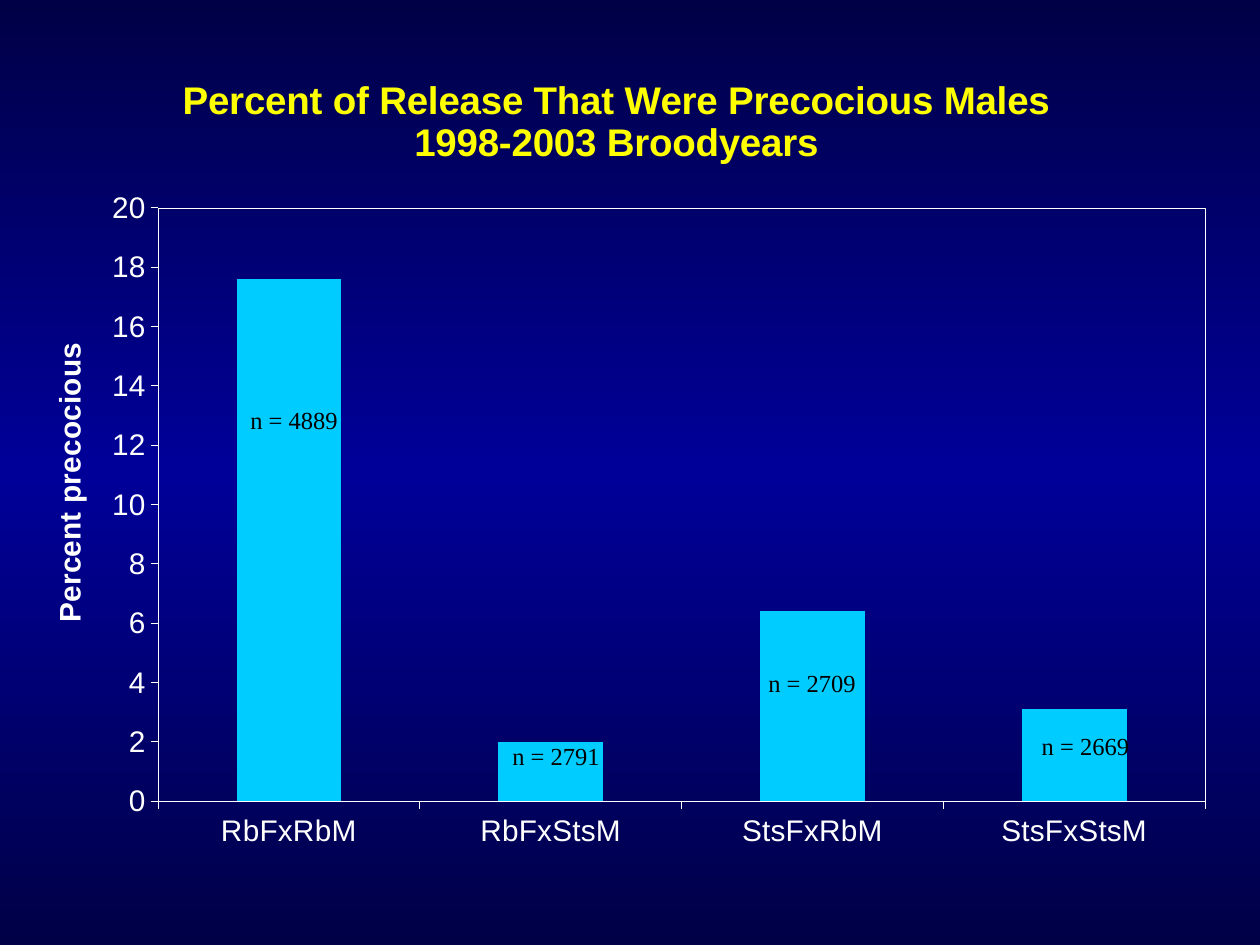
from lxml import etree
from pptx import Presentation
from pptx import util as u
from pptx.chart import data
from pptx.dml.color import RGBColor
from pptx.enum import chart as ch, text
from pptx.oxml import parse_xml
from pptx.oxml.ns import nsdecls, qn

WHITE, YELLOW, CYAN, BLACK = "FFFFFF", "FFFF00", "00CCFF", "000000"
EDGE_BLUE, MIDDLE_BLUE = "000046", "000099"
PRECOCIOUS = {"RbFxRbM": 17.6, "RbFxStsM": 2, "StsFxRbM": 6.4, "StsFxStsM": 3.1}
SAMPLE_SIZES = [
    ("n = 4889", 3.81, 8.05, 4.24, text.PP_ALIGN.CENTER),
    ("n = 2791", 9.09, 14.81, 4.24, text.PP_ALIGN.CENTER),
    ("n = 2669", 20.75, 14.61, 2.54, text.PP_ALIGN.LEFT),
    ("n = 2709", 15.24, 13.34, 2.34, text.PP_ALIGN.LEFT),
]


def rgb(value):
    """Turn a hex string into a colour."""
    return RGBColor.from_string(value)


def style_font(font, size, color, name="Arial", bold=False):
    """Set the look of a font."""
    font.size, font.name, font.bold = u.Pt(size), name, bold
    font.color.rgb = rgb(color)


def paint_background(slide):
    """Shade the background from dark edges to a brighter middle."""
    stops = "".join(
        f'<a:gs pos="{pos}"><a:srgbClr val="{color}"/></a:gs>'
        for pos, color in ((0, EDGE_BLUE), (50000, MIDDLE_BLUE), (100000, EDGE_BLUE))
    )
    background = parse_xml(
        f'<p:bg {nsdecls("p", "a")}><p:bgPr><a:gradFill rotWithShape="0">'
        f'<a:gsLst>{stops}</a:gsLst><a:lin ang="5400000" scaled="1"/></a:gradFill>'
        "<a:effectLst/></p:bgPr></p:bg>"
    )
    slide.element.cSld.insert(0, background)


def make_layout(x, y, w=None, h=None):
    """Build a manual chart layout in fractions of the chart."""
    settings = [("xMode", "edge"), ("yMode", "edge"), ("x", x), ("y", y)]
    if w is not None:
        settings = [("layoutTarget", "inner")] + settings + [("w", w), ("h", h)]
    body = "".join(f'<c:{tag} val="{value}"/>' for tag, value in settings)
    return parse_xml(
        f'<c:layout {nsdecls("c")}><c:manualLayout>{body}</c:manualLayout></c:layout>'
    )


def write_title(title, wording, size, color, x, y):
    """Write and place a chart or axis title."""
    title.text_frame.text = wording
    for paragraph in title.text_frame.paragraphs:
        for run in paragraph.runs:
            style_font(run.font, size, color, bold=True)
    element = title._element
    for old in element.findall(qn("c:layout")):
        element.remove(old)
    element.find(qn("c:tx")).addnext(make_layout(x, y))


def style_axis(axis):
    """Give an axis white labels, a thin line and outer ticks."""
    axis.has_major_gridlines = False
    axis.major_tick_mark = ch.XL_TICK_MARK.OUTSIDE
    axis.minor_tick_mark = ch.XL_TICK_MARK.NONE
    style_font(axis.tick_labels.font, 17, WHITE)
    axis.format.line.color.rgb = rgb(WHITE)
    axis.format.line.width = u.Pt(0.5)


def frame_plot(chart):
    """Place the plot area and outline it in white."""
    plot_area = chart._chartSpace.chart.plotArea
    for old in plot_area.findall(qn("c:layout")):
        plot_area.remove(old)
    plot_area.insert(0, make_layout(0.123, 0.193, 0.855, 0.721))
    frame = etree.SubElement(plot_area, qn("c:spPr"))
    frame.append(parse_xml(f'<a:noFill {nsdecls("a")}/>'))
    frame.append(parse_xml(
        f'<a:ln w="6350" {nsdecls("a")}><a:solidFill>'
        f'<a:srgbClr val="{WHITE}"/></a:solidFill></a:ln>'
    ))


def add_precocious_chart(slide):
    """Add the column chart of precocious males by cross."""
    chart_data = data.CategoryChartData(number_format="0")
    chart_data.categories = list(PRECOCIOUS)
    chart_data.add_series("Series 1", list(PRECOCIOUS.values()))
    chart = slide.shapes.add_chart(
        ch.XL_CHART_TYPE.COLUMN_CLUSTERED,
        u.Cm(0.15), u.Cm(0.99), u.Cm(24.69), u.Cm(16.59), chart_data,
    ).chart
    style_font(chart.font, 17, BLACK)
    chart.has_legend = False
    write_title(
        chart.chart_title,
        "Percent of Release That Were Precocious Males\n1998-2003 Broodyears",
        22, YELLOW, 0.14, 0.03,
    )

    percent = chart.value_axis
    style_axis(chart.category_axis)
    style_axis(percent)
    percent.minimum_scale, percent.maximum_scale, percent.major_unit = 0, 20, 2
    percent.tick_labels.number_format = "0"
    percent.tick_labels.number_format_is_linked = False
    write_title(percent.axis_title, "Percent precocious", 17, WHITE, 0.03, 0.35)

    columns = chart.plots[0]
    columns.gap_width = 150
    columns.vary_by_categories = False
    fill = columns.series[0].format.fill
    fill.solid()
    fill.fore_color.rgb = rgb(CYAN)
    frame_plot(chart)


def add_sample_size(slide, wording, left, top, width, alignment):
    """Add the number of fish behind one column."""
    box = slide.shapes.add_textbox(u.Cm(left), u.Cm(top), u.Cm(width), u.Cm(0.84))
    box.text_frame.word_wrap = True
    box.text_frame.auto_size = text.MSO_AUTO_SIZE.SHAPE_TO_FIT_TEXT
    box.text_frame.text = wording
    paragraph = box.text_frame.paragraphs[0]
    paragraph.alignment = alignment
    style_font(paragraph.runs[0].font, 14, BLACK, "Times New Roman")


def main():
    """Build and save the slide."""
    deck = Presentation()
    deck.slide_width, deck.slide_height = u.Cm(25.4), u.Cm(19.05)
    slide = deck.slides.add_slide(deck.slide_layouts[6])
    paint_background(slide)
    add_precocious_chart(slide)
    for sample in SAMPLE_SIZES:
        add_sample_size(slide, *sample)
    deck.save("out.pptx")


if __name__ == "__main__":
    main()
